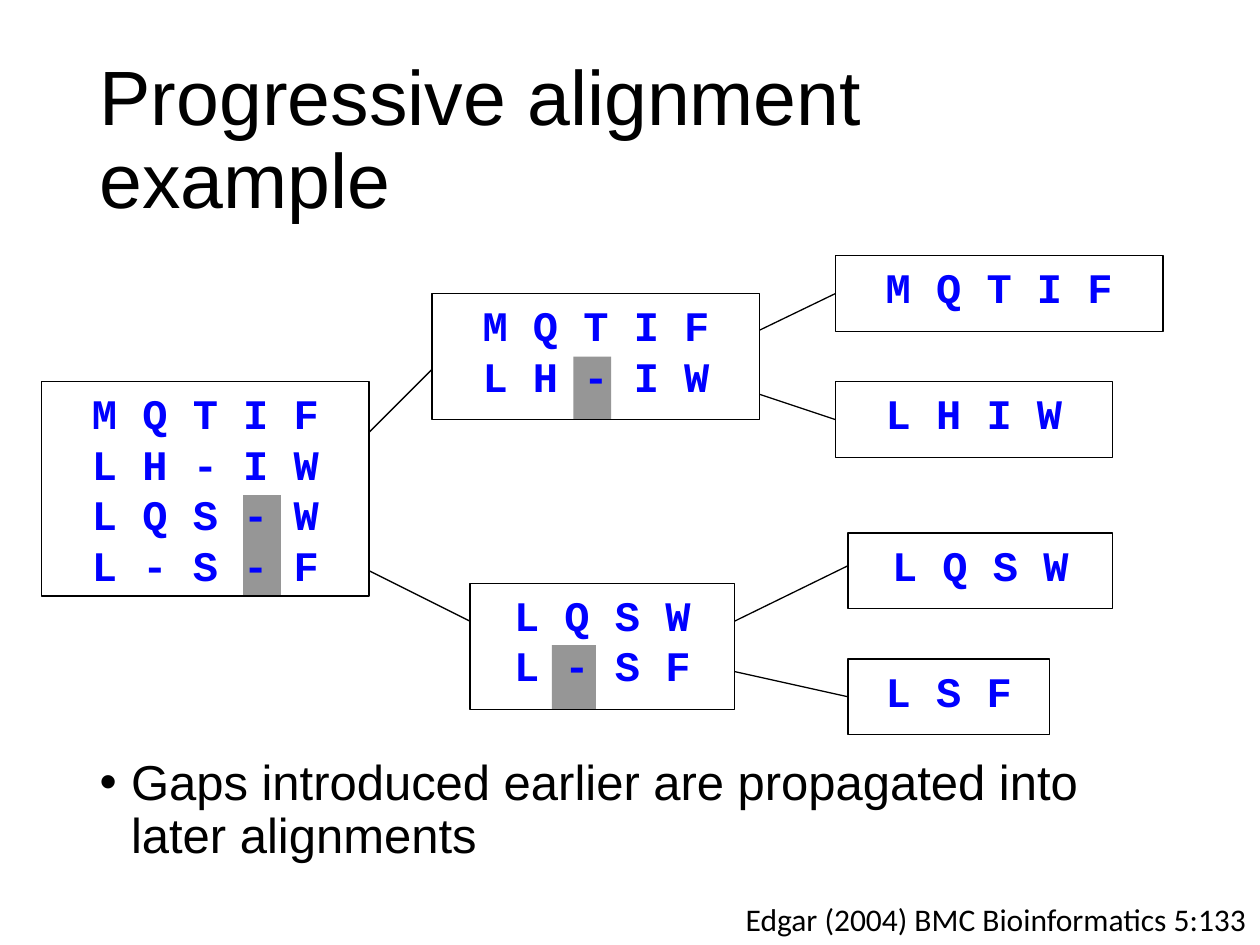
from lxml import etree
from pptx import Presentation
from pptx.dml.color import RGBColor
from pptx.enum.shapes import MSO_CONNECTOR, MSO_SHAPE
from pptx.enum.text import MSO_ANCHOR as ANCHOR, MSO_AUTO_SIZE as AUTO, PP_ALIGN as ALIGN
from pptx.oxml.ns import qn
from pptx.util import Inches, Pt

COLORS = {"text": "000000", "residue": "0000FF", "gap": "969696", "line": "000000"}
LEFT_SIDE = 1

GAPS = [
    (1.93, 3.93, 0.3, 0.8),
    (4.38, 5.12, 0.35, 0.51),
    (4.55, 2.83, 0.3, 0.5),
]
ALIGNMENTS = {
    "MQTIF/LHIW": (3.43, 2.33, 2.6, 1, ["M Q T I F", "L H - I W"]),
    "MQTIF": (6.63, 2.03, 2.6, 0.6, ["M Q T I F"]),
    "LHIW": (6.63, 3.03, 2.2, 0.6, ["L H I W"]),
    "LQSW": (6.73, 4.23, 2.1, 0.6, ["L Q S W"]),
    "LSF": (6.73, 5.23, 1.6, 0.6, ["L S F"]),
    "LQSW/LSF": (3.73, 4.63, 2.1, 1, ["L Q S W", "L - S F"]),
    "all": (0.33, 3.03, 2.6, 1.7, ["M Q T I F", "L H - I W", "L Q S - W", "L - S - F"]),
}
BRANCHES = [
    (2.93, 3.43, 3.43, 2.93, None),
    (2.93, 4.53, 3.73, 4.93, None),
    (6.03, 2.62, 6.63, 2.33, "MQTIF"),
    (6.03, 3.13, 6.63, 3.33, "LHIW"),
    (5.83, 4.93, 6.73, 4.49, None),
    (5.83, 5.33, 6.73, 5.53, "LSF"),
]


def color(name):
    return RGBColor.from_string(COLORS[name])


def write(p, text, font="Arial", size=24, fill="text", bold=False, align=ALIGN.LEFT, spacing=None):
    p.alignment = align
    if spacing:
        p.line_spacing = spacing
    r = p.add_run()
    r.text = text
    r.font.name = font
    r.font.size = Pt(size)
    r.font.bold = bold
    r.font.color.rgb = color(fill)


def place(sp, left, top, width, height):
    sp.left, sp.top, sp.width, sp.height = map(Inches, (left, top, width, height))
    sp.text_frame.auto_size = AUTO.NONE
    return sp.text_frame


def add_title(s, text):
    tf = place(s.shapes.title, 0.69, 0.4, 8.62, 1.45)
    tf.vertical_anchor = ANCHOR.MIDDLE
    write(tf.paragraphs[0], text, size=44, spacing=0.9)


def add_bullet(s, text):
    tf = place(s.placeholders[1], 0.69, 5.97, 8.62, 1.02)
    p = tf.paragraphs[0]
    pPr = p._p.get_or_add_pPr()
    pPr.set("marL", str(Inches(0.25)))
    pPr.set("indent", str(-Inches(0.25)))
    etree.SubElement(pPr, qn("a:buFont")).set("typeface", "Arial")
    etree.SubElement(pPr, qn("a:buChar")).set("char", "•")
    p.space_before = Pt(0)
    write(p, text, size=28, spacing=0.9)


def add_rect(s, left, top, width, height):
    sp = s.shapes.add_shape(MSO_SHAPE.RECTANGLE, *map(Inches, (left, top, width, height)))
    sp.shadow.inherit = False
    return sp


def add_gap(s, *box):
    sp = add_rect(s, *box)
    sp.fill.solid()
    sp.fill.fore_color.rgb = color("gap")
    sp.line.fill.background()


def add_alignment(s, left, top, width, height, rows):
    sp = add_rect(s, left, top, width, height)
    sp.fill.background()
    sp.line.color.rgb = color("line")
    sp.line.width = Pt(0.75)
    tf = sp.text_frame
    tf.vertical_anchor = ANCHOR.TOP
    for i, row in enumerate(rows):
        p = tf.add_paragraph() if i else tf.paragraphs[0]
        write(p, row, font="Courier New", fill="residue", bold=True, align=ALIGN.CENTER)
    return sp


def add_branch(s, x1, y1, x2, y2, target=None):
    cxn = s.shapes.add_connector(MSO_CONNECTOR.STRAIGHT, *map(Inches, (x1, y1, x2, y2)))
    cxn.line.color.rgb = color("line")
    cxn.line.width = Pt(0.75)
    etree.SubElement(cxn._element.spPr, qn("a:effectLst"))
    if target is not None:
        cxn.end_connect(target, LEFT_SIDE)


def add_citation(s, text):
    sp = s.shapes.add_textbox(*map(Inches, (5.82, 7.09, 4.22, 0.4)))
    tf = sp.text_frame
    tf.word_wrap = False
    tf.auto_size = AUTO.SHAPE_TO_FIT_TEXT
    write(tf.paragraphs[0], text, font="Calibri", size=18)


def main():
    prs = Presentation()
    prs.slide_width, prs.slide_height = Inches(10), Inches(7.5)
    s = prs.slides.add_slide(prs.slide_layouts[1])
    add_title(s, "Progressive alignment example")
    add_bullet(s, "Gaps introduced earlier are propagated into later alignments")
    for gap in GAPS:
        add_gap(s, *gap)
    boxes = {name: add_alignment(s, *spec) for name, spec in ALIGNMENTS.items()}
    for *ends, target in BRANCHES:
        add_branch(s, *ends, target=boxes.get(target))
    add_citation(s, "Edgar (2004) BMC Bioinformatics 5:133")
    prs.save("out.pptx")


if __name__ == "__main__":
    main()
